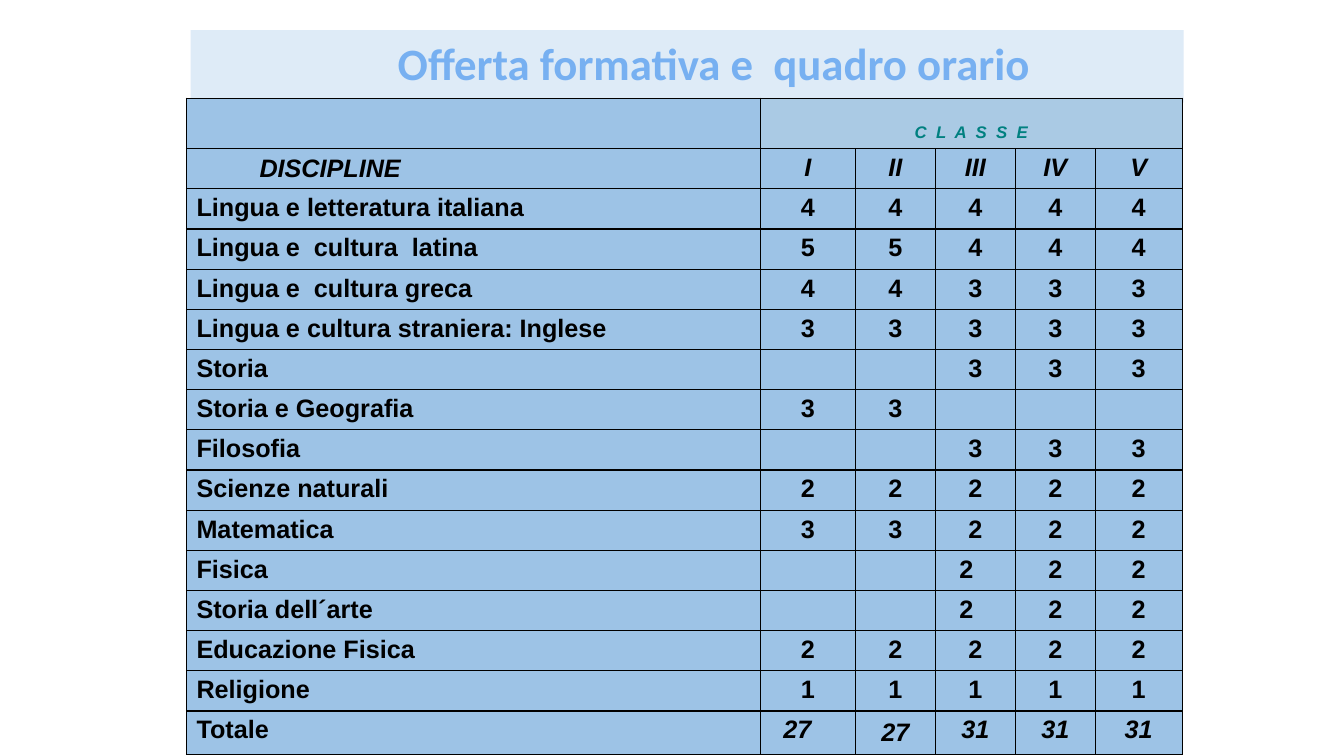
from lxml.etree import SubElement
from pptx import Presentation
from pptx.dml.color import RGBColor
from pptx.enum.shapes import MSO_SHAPE
from pptx.enum.text import MSO_ANCHOR, PP_ALIGN
from pptx.oxml.ns import qn
from pptx.util import Pt

# Content
TITLE = "Offerta formativa e  quadro orario"
CLASS_HEADING = "C  L  A  S  S  E"
ROWS = [
    ("DISCIPLINE", "I", "II", "III", "IV", "V"),
    ("Lingua e letteratura italiana", "4", "4", "4", "4", "4"),
    ("Lingua e  cultura  latina", "5", "5", "4", "4", "4"),
    ("Lingua e  cultura greca", "4", "4", "3", "3", "3"),
    ("Lingua e cultura straniera: Inglese", "3", "3", "3", "3", "3"),
    ("Storia", "", "", "3", "3", "3"),
    ("Storia e Geografia", "3", "3", "", "", ""),
    ("Filosofia", "", "", "3", "3", "3"),
    ("Scienze naturali", "2", "2", "2", "2", "2"),
    ("Matematica", "3", "3", "2", "2", "2"),
    ("Fisica", "", "", "2", "2", "2"),
    ("Storia dell´arte", "", "", "2", "2", "2"),
    ("Educazione Fisica", "2", "2", "2", "2", "2"),
    ("Religione", "1", "1", "1", "1", "1"),
    ("Totale", "27", "27", "31", "31", "31"),
]

# Layout in points
COLUMN_WIDTHS = [410, 67.9, 57.1, 57.1, 57.1, 62.1]
ROW_HEIGHTS = [36] + [28.7] * (len(ROWS) - 1) + [31]
TABLE_LEFT, TABLE_TOP = 133.2, 70.2
CELL_FILL, HEADING_FILL = "9DC3E6", "AACAE4"


def color(hex_value):
    return RGBColor.from_string(hex_value)


def fill_solid(target, hex_value):
    target.fill.solid()
    target.fill.fore_color.rgb = color(hex_value)


def write(text_frame, text, name, size, hex_value, align, italic=False):
    text_frame.text = text
    paragraph = text_frame.paragraphs[0]
    paragraph.alignment = align
    for run in paragraph.runs:
        font = run.font
        font.name, font.size = name, Pt(size)
        font.bold, font.italic = True, italic
        font.color.rgb = color(hex_value)


def add_borders(cell):
    properties = cell._tc.get_or_add_tcPr()
    for position, side in enumerate(("lnL", "lnR", "lnT", "lnB")):
        line = SubElement(properties, qn(f"a:{side}"), w=str(Pt(1)))
        properties.insert(position, line)
        solid = SubElement(line, qn("a:solidFill"))
        SubElement(solid, qn("a:srgbClr"), val="000000")


presentation = Presentation()
presentation.slide_width, presentation.slide_height = Pt(960), Pt(540)
slide = presentation.slides.add_slide(presentation.slide_layouts[6])

# Title band
band = slide.shapes.add_shape(MSO_SHAPE.RECTANGLE, Pt(136.2), Pt(21.5), Pt(709.2), Pt(51.8))
band.shadow.inherit = False
fill_solid(band, "DEEBF7")
band.line.fill.background()
band.text_frame.word_wrap = True
band.text_frame.vertical_anchor = MSO_ANCHOR.MIDDLE
band.text_frame.margin_left = Pt(45.4)
write(band.text_frame, TITLE, "Calibri", 32, "77B0F1", PP_ALIGN.CENTER)
band.text_frame.paragraphs[0].line_spacing = 0.9

# Timetable grid
table = slide.shapes.add_table(
    len(ROW_HEIGHTS), len(COLUMN_WIDTHS), Pt(TABLE_LEFT), Pt(TABLE_TOP),
    Pt(sum(COLUMN_WIDTHS)), Pt(sum(ROW_HEIGHTS))).table
for column, width in zip(table.columns, COLUMN_WIDTHS):
    column.width = Pt(width)
for row, height in zip(table.rows, ROW_HEIGHTS):
    row.height = Pt(height)
for cell in table.iter_cells():
    fill_solid(cell, CELL_FILL)
    add_borders(cell)

# Class heading across the five years
heading = table.cell(0, 1)
heading.merge(table.cell(0, 5))
fill_solid(heading, HEADING_FILL)
heading.vertical_anchor = MSO_ANCHOR.BOTTOM
heading.margin_bottom = Pt(4.5)
write(heading.text_frame, CLASS_HEADING, "Arial", 12, "008080", PP_ALIGN.CENTER, True)

# Disciplines and weekly hours
last_row = len(ROWS)
for row_index, values in enumerate(ROWS, start=1):
    for column_index, value in enumerate(values):
        cell = table.cell(row_index, column_index)
        if not value:
            cell.margin_top = cell.margin_bottom = 0
            continue
        italic = row_index == 1 or (row_index == last_row and column_index > 0)
        align = PP_ALIGN.CENTER if column_index else PP_ALIGN.LEFT
        write(cell.text_frame, value, "Arial", 18, "000000", align, italic)

# Cells set apart from the grid rule
table.cell(1, 0).margin_left = Pt(52.2)
table.cell(1, 0).vertical_anchor = MSO_ANCHOR.MIDDLE
table.cell(last_row, 1).margin_right = Pt(22.2)
table.cell(last_row, 2).vertical_anchor = MSO_ANCHOR.MIDDLE
for row_index, values in enumerate(ROWS, start=1):
    if values[0] in ("Fisica", "Storia dell´arte"):
        cell = table.cell(row_index, 3)
        cell.margin_left = Pt(17.2)
        cell.text_frame.paragraphs[0].alignment = PP_ALIGN.LEFT

presentation.save("out.pptx")
